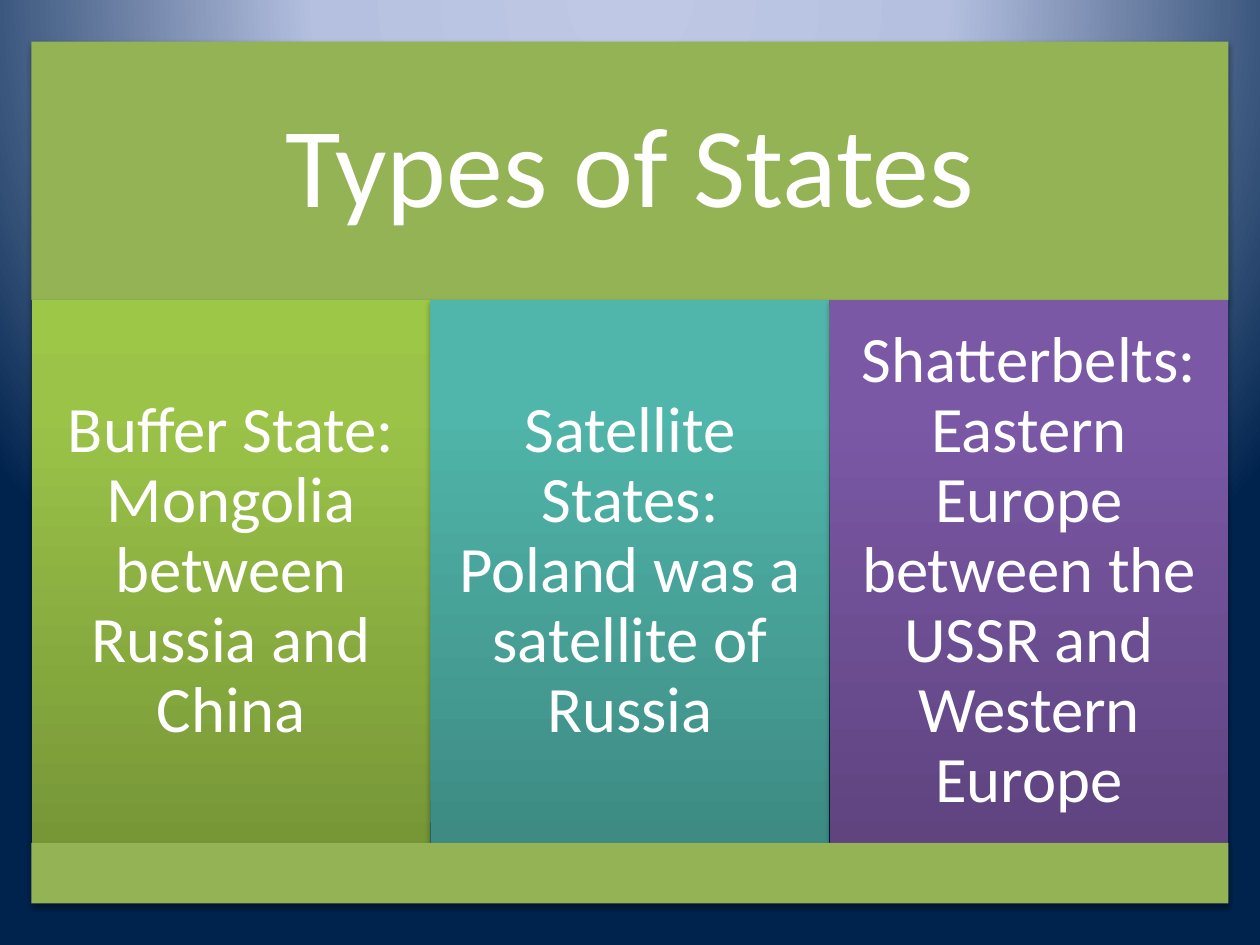
from dataclasses import dataclass

from pptx import Presentation
from pptx.dml.color import RGBColor
from pptx.enum.shapes import MSO_SHAPE as Shape
from pptx.enum.text import MSO_ANCHOR as Anchor, PP_ALIGN as Align
from pptx.oxml import parse_xml
from pptx.oxml.ns import nsdecls, qn
from pptx.util import Inches, Pt

Stops = tuple[tuple[int, str], ...]


@dataclass(frozen=True)
class Theme:
    font: str = "Calibri"
    title_size: int = 65
    body_size: int = 37
    text: str = "FFFFFF"
    band: str = "94B355"
    backdrop: Stops = ((0, "BFC9E5"), (40, "B5C0E0"), (100, "00234D"))


@dataclass(frozen=True)
class Column:
    text: str
    stops: Stops


THEME = Theme()
LEFT, WIDTH = 0.25, 9.5
TITLE_TOP, COLUMN_TOP, FOOTER_TOP, BOTTOM = 0.33, 2.38, 6.69, 7.17
COLUMNS = (
    Column("Buffer State: Mongolia between Russia and China",
           ((0, "779737"), (80, "9BC348"), (100, "9DC746"))),
    Column("Satellite States: Poland was a satellite of Russia",
           ((0, "3D8B83"), (80, "50B5AA"), (100, "4EB8AC"))),
    Column("Shatterbelts: Eastern Europe between the USSR and Western Europe",
           ((0, "5F4480"), (80, "7B58A6"), (100, "7C57A8"))),
)
UPWARD = '<a:lin ang="16200000" scaled="0"/>'
RADIAL = ('<a:path path="circle">'
          '<a:fillToRect l="50000" t="-80000" r="50000" b="180000"/></a:path>')
SHADOW = (f'<a:outerShdw {nsdecls("a")} blurRad="40000" dist="23000" '
          'dir="5400000" rotWithShape="0"><a:srgbClr val="000000">'
          '<a:alpha val="35000"/></a:srgbClr></a:outerShdw>')


def set_gradient(props, stops: Stops, direction: str) -> None:
    marks = "".join(f'<a:gs pos="{pos * 1000}"><a:srgbClr val="{color}"/></a:gs>'
                    for pos, color in stops)
    grad = parse_xml(f'<a:gradFill {nsdecls("a")} rotWithShape="1">'
                     f'<a:gsLst>{marks}</a:gsLst>{direction}</a:gradFill>')
    props.replace(props.find(qn("a:noFill")), grad)


def add_panel(slide, left: float, top: float, width: float, bottom: float,
              fill: str | Stops):
    sp = slide.shapes.add_shape(Shape.RECTANGLE, Inches(left), Inches(top),
                                Inches(width), Inches(bottom - top))
    sp.line.fill.background()
    if isinstance(fill, str):
        sp.fill.solid()
        sp.fill.fore_color.rgb = RGBColor.from_string(fill)
    else:
        sp.fill.background()
        set_gradient(sp.element.spPr, fill, UPWARD)
    sp.shadow.inherit = False
    sp.element.spPr.find(qn("a:effectLst")).append(parse_xml(SHADOW))
    return sp


def write(sp, text: str, size: int, inset: float) -> None:
    tf = sp.text_frame
    tf.word_wrap = True
    tf.vertical_anchor = Anchor.MIDDLE
    tf.margin_left = tf.margin_right = Inches(inset)
    tf.margin_top = tf.margin_bottom = Inches(inset)
    p = tf.paragraphs[0]
    p.text = text
    p.alignment = Align.CENTER
    p.line_spacing = 0.9
    p.font.name = THEME.font
    p.font.size = Pt(size)
    p.font.color.rgb = RGBColor.from_string(THEME.text)


def main() -> None:
    prs = Presentation()
    prs.slide_width, prs.slide_height = Inches(10), Inches(7.5)
    slide = prs.slides.add_slide(prs.slide_layouts[6])
    slide.background.fill.background()
    set_gradient(slide.element.find(f".//{qn('p:bgPr')}"), THEME.backdrop, RADIAL)

    title = add_panel(slide, LEFT, TITLE_TOP, WIDTH, COLUMN_TOP, THEME.band)
    write(title, "Types of States", THEME.title_size, 0.27)
    width = WIDTH / len(COLUMNS)
    for i, column in enumerate(COLUMNS):
        sp = add_panel(slide, LEFT + i * width, COLUMN_TOP, width, FOOTER_TOP,
                       column.stops)
        write(sp, column.text, THEME.body_size, 0.15)
    add_panel(slide, LEFT, FOOTER_TOP, WIDTH, BOTTOM, THEME.band)
    prs.save("out.pptx")


if __name__ == "__main__":
    main()
